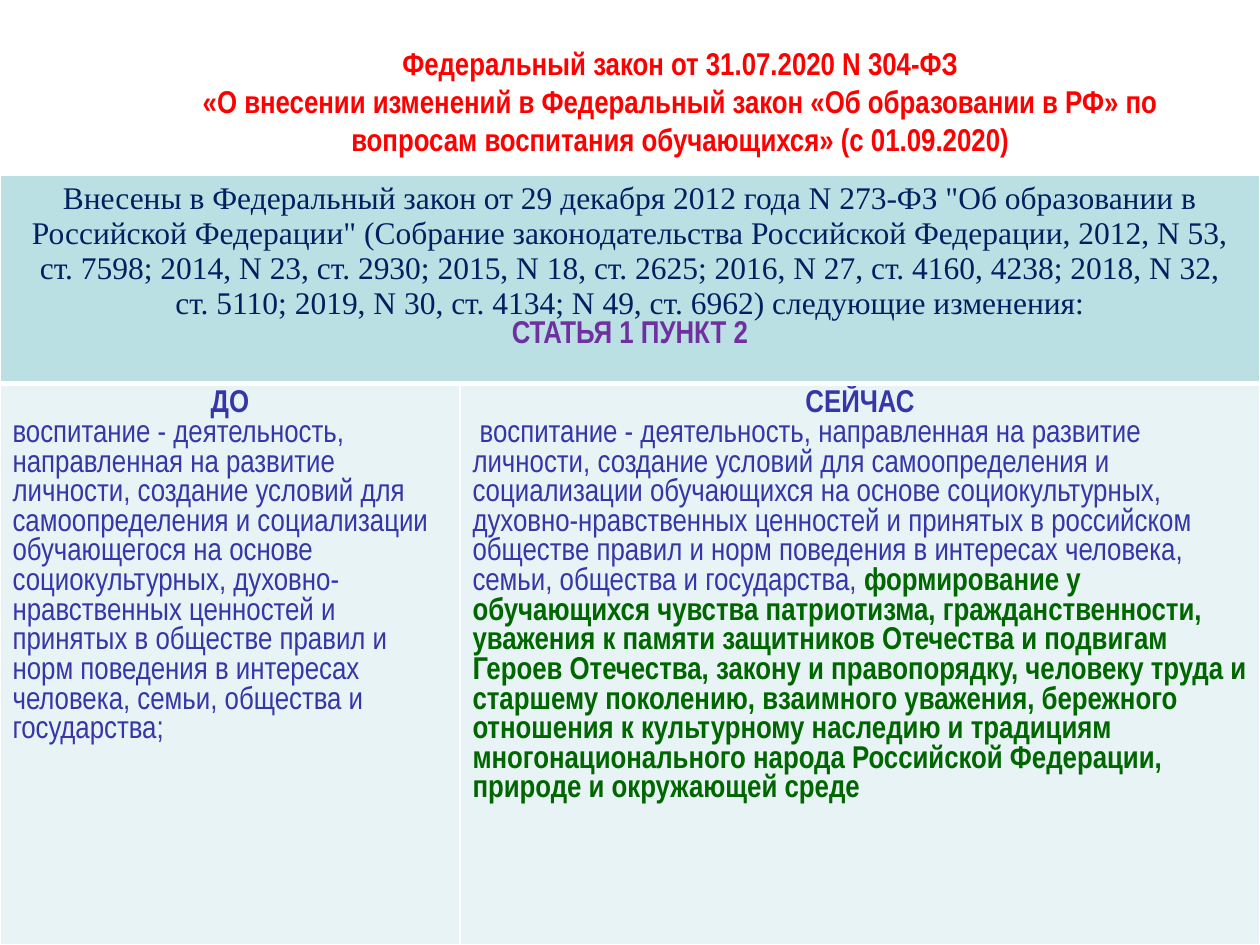
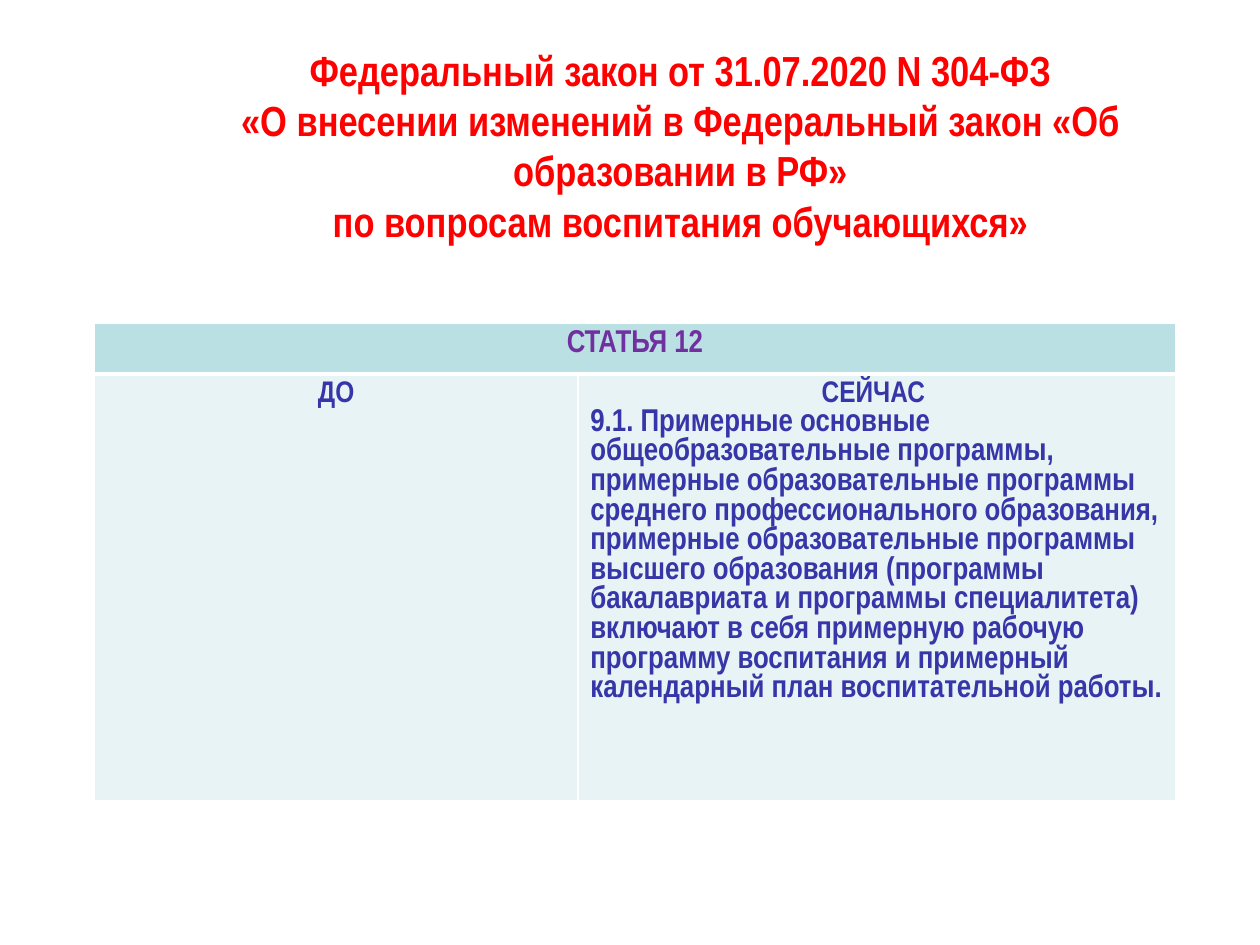
from lxml import etree
from pptx import Presentation
from pptx.dml.color import RGBColor
from pptx.enum.text import MSO_ANCHOR, PP_ALIGN
from pptx.oxml.ns import qn
from pptx.util import Pt

CENTER, LEFT = PP_ALIGN.CENTER, PP_ALIGN.LEFT
TOP = MSO_ANCHOR.TOP

RED = RGBColor(0xFF, 0x00, 0x00)
NAVY = RGBColor(0x00, 0x20, 0x60)
PURPLE = RGBColor(0x70, 0x30, 0xA0)
INDIGO = RGBColor(0x36, 0x36, 0xA8)
GREEN = RGBColor(0x00, 0x66, 0x00)
HEADER_FILL = RGBColor(0xBB, 0xE0, 0xE3)
BODY_FILL = RGBColor(0xE7, 0xF3, 0xF4)
WHITE = RGBColor(0xFF, 0xFF, 0xFF)

NARROW, SERIF = "Arial Narrow", "Times New Roman"
THIN, THICK = Pt(1), Pt(3)
HARD_SPACE = chr(160)


def bind_numbers(text):
    for phrase in ("N ", "ст. ", " года"):
        text = text.replace(phrase, phrase.replace(" ", HARD_SPACE))
    return text


def add_span(para, text, color, size=18, bold=False, font=NARROW):
    span = para.add_run()
    span.text = text
    span.font.color.rgb = color
    for name, value in {"name": font, "size": Pt(size), "bold": bold}.items():
        setattr(span.font, name, value)


def add_title(page, box, lines, size):
    frame = page.shapes.add_textbox(*map(Pt, box)).text_frame
    frame.word_wrap = True
    frame.vertical_anchor = TOP
    para = frame.paragraphs[0]
    para.alignment = CENTER
    for index, line in enumerate(lines):
        if index:
            para.add_line_break()
        add_span(para, line, RED, size, bold=True)


def add_borders(cell, top, bottom):
    properties = cell._tc.get_or_add_tcPr()
    for side, width in {"lnL": THIN, "lnR": THIN, "lnT": top, "lnB": bottom}.items():
        line = etree.SubElement(properties, qn(f"a:{side}"), w=str(width))
        fill = etree.SubElement(line, qn("a:solidFill"))
        etree.SubElement(fill, qn("a:srgbClr"), val=str(WHITE))


def fill_cell(cell, paragraphs):
    frame = cell.text_frame
    for index, (alignment, spans) in enumerate(paragraphs):
        para = frame.add_paragraph() if index else frame.paragraphs[0]
        para.alignment = alignment
        for span in spans:
            add_span(para, **span)


def heading(text, color=INDIGO, size=18):
    return CENTER, [dict(text=text, color=color, size=size, bold=True)]


def body(*spans):
    return LEFT, spans


def add_comparison(page, box, first_column, header_height, header, before, now):
    left, top, width, height = box
    table = page.shapes.add_table(2, 2, Pt(left), Pt(top), Pt(width), Pt(height)).table
    for column, size in zip(table.columns, (first_column, width - first_column)):
        column.width = Pt(size)
    for row, size in zip(table.rows, (header_height, height - header_height)):
        row.height = Pt(size)
    for row, (color, upper, lower) in enumerate(
        [(HEADER_FILL, THIN, THICK), (BODY_FILL, THICK, THIN)]
    ):
        for column in range(2):
            cell = table.cell(row, column)
            add_borders(cell, upper, lower)
            cell.fill.solid()
            cell.fill.fore_color.rgb = color
            cell.vertical_anchor = TOP
    table.cell(0, 0).merge(table.cell(0, 1))
    fill_cell(table.cell(0, 0), header)
    fill_cell(table.cell(1, 0), before)
    fill_cell(table.cell(1, 1), now)


def build_definition_page(page):
    add_title(page, (93.6, 21.6, 590.4, 78.5), [
        "Федеральный закон от 31.07.2020 N 304-ФЗ",
        "«О внесении изменений в Федеральный закон «Об образовании в РФ» по "
        "вопросам воспитания обучающихся» (с 01.09.2020)",
    ], 18)
    amendments = bind_numbers(
        "Внесены в Федеральный закон от 29 декабря 2012 года N 273-ФЗ \"Об образовании в "
        "Российской Федерации\" (Собрание законодательства Российской Федерации, 2012, "
        "N 53, ст. 7598; 2014, N 23, ст. 2930; 2015, N 18, ст. 2625; 2016, N 27, "
        "ст. 4160, 4238; 2018, N 32, ст. 5110; 2019, N 30, ст. 4134; N 49, ст. 6962) "
        "следующие изменения:"
    )
    old_text = (
        "воспитание - деятельность, направленная на развитие личности, создание условий "
        "для самоопределения и социализации обучающегося на основе социокультурных, "
        "духовно-нравственных ценностей и принятых в обществе правил и норм поведения в "
        "интересах человека, семьи, общества и государства;"
    )
    kept_text = (
        " воспитание - деятельность, направленная на развитие личности, создание условий "
        "для самоопределения и социализации обучающихся на основе социокультурных, "
        "духовно-нравственных ценностей и принятых в российском обществе правил и норм "
        "поведения в интересах человека, семьи, общества и государства, "
    )
    added_text = (
        "формирование у обучающихся чувства патриотизма, гражданственности, уважения к "
        "памяти защитников Отечества и подвигам Героев Отечества, закону и правопорядку, "
        "человеку труда и старшему поколению, взаимного уважения, бережного отношения к "
        "культурному наследию и традициям многонационального народа Российской Федерации, "
        "природе и окружающей среде"
    )
    add_comparison(
        page, (0, 100.1, 720, 439.9), 262.8, 119.2,
        header=[
            (CENTER, [dict(text=amendments, color=NAVY, font=SERIF)]),
            heading("СТАТЬЯ 1 ПУНКТ 2", PURPLE),
        ],
        before=[heading("ДО"), body(dict(text=old_text, color=INDIGO))],
        now=[
            heading("СЕЙЧАС"),
            body(dict(text=kept_text, color=INDIGO),
                 dict(text=added_text, color=GREEN, bold=True)),
        ],
    )


def build_programme_page(page):
    add_title(page, (93.6, 21.6, 590.4, 90), [
        "Федеральный закон от 31.07.2020 N 304-ФЗ",
        "«О внесении изменений в Федеральный закон «Об образовании в РФ»",
        "по вопросам воспитания обучающихся»",
    ], 24)
    new_text = (
        "9.1. Примерные основные общеобразовательные программы, примерные "
        "образовательные программы среднего профессионального образования, примерные "
        "образовательные программы высшего образования (программы бакалавриата и "
        "программы специалитета) включают в себя примерную рабочую программу воспитания "
        "и примерный календарный план воспитательной работы."
    )
    add_comparison(
        page, (54, 185, 617.8, 237.5), 276.2, 28.8,
        header=[heading("СТАТЬЯ 12", PURPLE)],
        before=[heading("ДО", size=17)],
        now=[
            heading("СЕЙЧАС ", size=17),
            body(dict(text=new_text, color=INDIGO, bold=True)),
        ],
    )


def main():
    deck = Presentation()
    deck.slide_width, deck.slide_height = Pt(720), Pt(540)
    for build in (build_definition_page, build_programme_page):
        build(deck.slides.add_slide(deck.slide_layouts[6]))
    deck.save("out.pptx")


if __name__ == "__main__":
    main()
